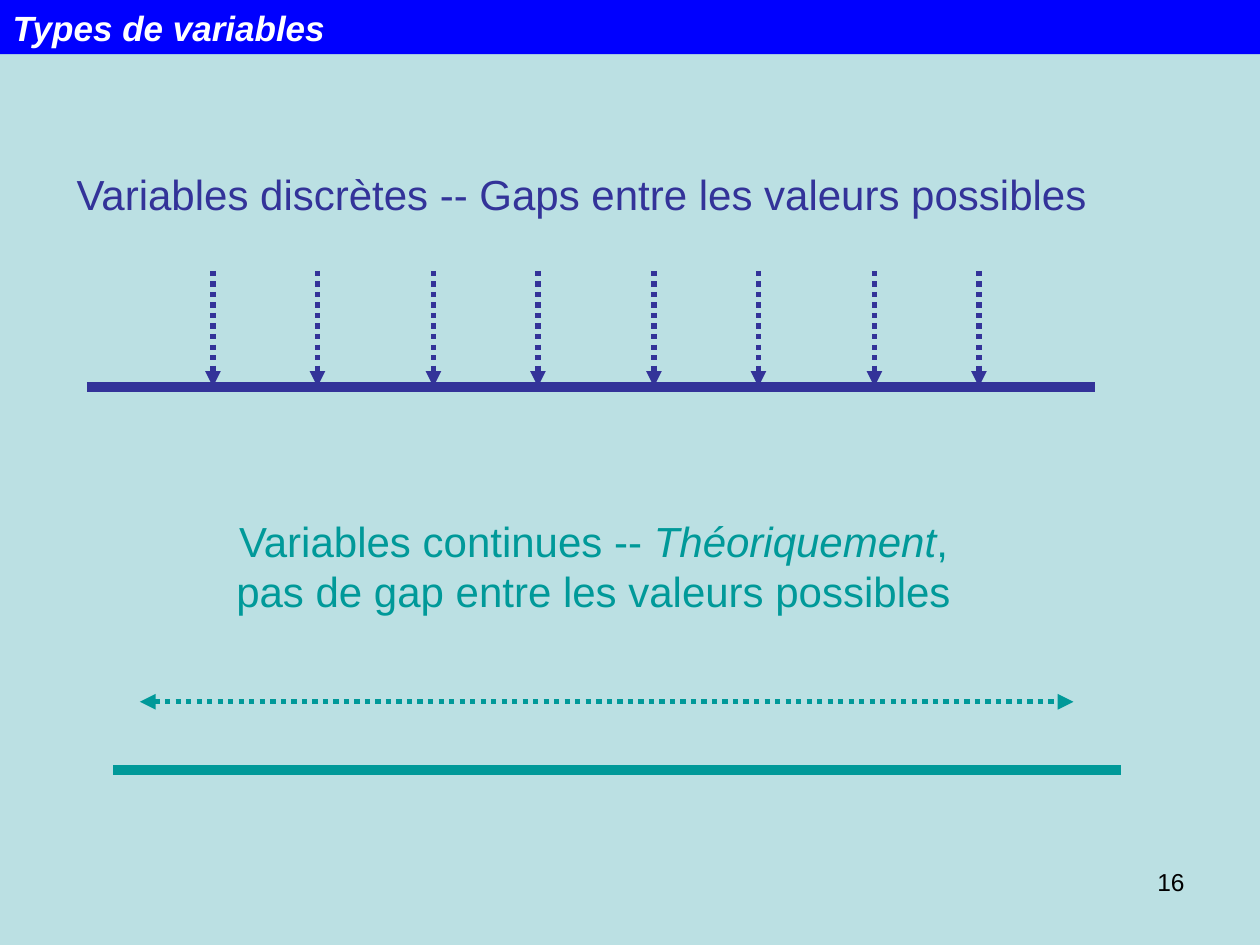
"""Build the slide on discrete and continuous variables."""
from lxml import etree
from pptx import Presentation
from pptx import util as u
from pptx.dml.color import RGBColor
from pptx.enum import dml, shapes, text
from pptx.oxml.ns import qn

BACKGROUND = RGBColor(0xBB, 0xE0, 0xE3)
BLUE = RGBColor(0x00, 0x00, 0xFF)
INDIGO = RGBColor(0x33, 0x33, 0x99)
TEAL = RGBColor(0x00, 0x99, 0x99)
WHITE = RGBColor(0xFF, 0xFF, 0xFF)
BLACK = RGBColor(0x00, 0x00, 0x00)


class SlideBuilder:
    def __init__(self, page, font="Arial"):
        self.page = page
        self.font = font
        page.background.fill.solid()
        page.background.fill.fore_color.rgb = BACKGROUND

    def place(self, box, left, top, width, height):
        box.left, box.top = u.Inches(left), u.Inches(top)
        box.width, box.height = u.Inches(width), u.Inches(height)

    def format_span(self, span, size, color, bold=False, italic=False):
        span.font.name = self.font
        span.font.size = u.Pt(size)
        span.font.color.rgb = color
        span.font.bold = bold
        span.font.italic = italic

    def title(self, wording, height):
        box = self.page.shapes.title
        self.place(box, 0, 0, 10, height)
        box.fill.solid()
        box.fill.fore_color.rgb = BLUE
        frame = box.text_frame
        frame.text = wording
        frame.auto_size = text.MSO_AUTO_SIZE.NONE
        frame.vertical_anchor = text.MSO_ANCHOR.MIDDLE
        para = frame.paragraphs[0]
        para.alignment = text.PP_ALIGN.LEFT
        self.format_span(para.runs[0], 20, WHITE, bold=True, italic=True)

    def text_box(self, lines, area, size, color, align=text.PP_ALIGN.CENTER, wrap=False):
        box = self.page.shapes.add_textbox(*map(u.Inches, area))
        frame = box.text_frame
        frame.word_wrap = wrap
        for index, line in enumerate(lines):
            para = frame.add_paragraph() if index else frame.paragraphs[0]
            para.alignment = align
            for wording, italic in line:
                span = para.add_run()
                span.text = wording
                self.format_span(span, size, color, italic=italic)

    def line(self, start, end, color, width, dotted=False, arrows=()):
        connector = self.page.shapes.add_connector(
            shapes.MSO_CONNECTOR.STRAIGHT, *map(u.Inches, (*start, *end)))
        connector.line.color.rgb = color
        connector.line.width = u.Pt(width)
        if dotted:
            connector.line.dash_style = dml.MSO_LINE.ROUND_DOT
        properties = connector.line._get_or_add_ln()
        for arrow in arrows:
            etree.SubElement(properties, qn(f"a:{arrow}"), type="triangle")
        etree.SubElement(connector._element.spPr, qn("a:effectLst"))


def main():
    deck = Presentation()
    deck.slide_width, deck.slide_height = u.Inches(10), u.Inches(7.5)
    builder = SlideBuilder(deck.slides.add_slide(deck.slide_layouts[5]))

    builder.title("Types de variables", 0.43)
    builder.text_box([[("16", False)]], (7.17, 6.83, 2.33, 0.52), 14, BLACK,
                     align=text.PP_ALIGN.RIGHT, wrap=True)

    builder.text_box([[("Variables discrètes -- Gaps entre les valeurs possibles", False)]],
                     (0.49, 1.29, 8.25, 0.5), 24, INDIGO)
    axis_y = 3.07
    builder.line((0.69, axis_y), (8.69, axis_y), INDIGO, 6)
    for pair in range(4):
        for offset in (0, 0.83):
            x = 1.69 + 1.75 * pair + offset
            builder.line((x, 2.15), (x, axis_y), INDIGO, 3, dotted=True, arrows=["tailEnd"])

    builder.text_box([[("Variables continues -- ", False), ("Théoriquement", True), (",", False)],
                      [("pas de gap entre les valeurs possibles", False)]],
                     (1.77, 4.04, 5.88, 0.9), 24, TEAL)
    builder.line((0.9, 6.11), (8.9, 6.11), TEAL, 6)
    builder.line((1.11, 5.57), (8.52, 5.57), TEAL, 3, dotted=True,
                 arrows=["headEnd", "tailEnd"])

    deck.save("out.pptx")


if __name__ == "__main__":
    main()
